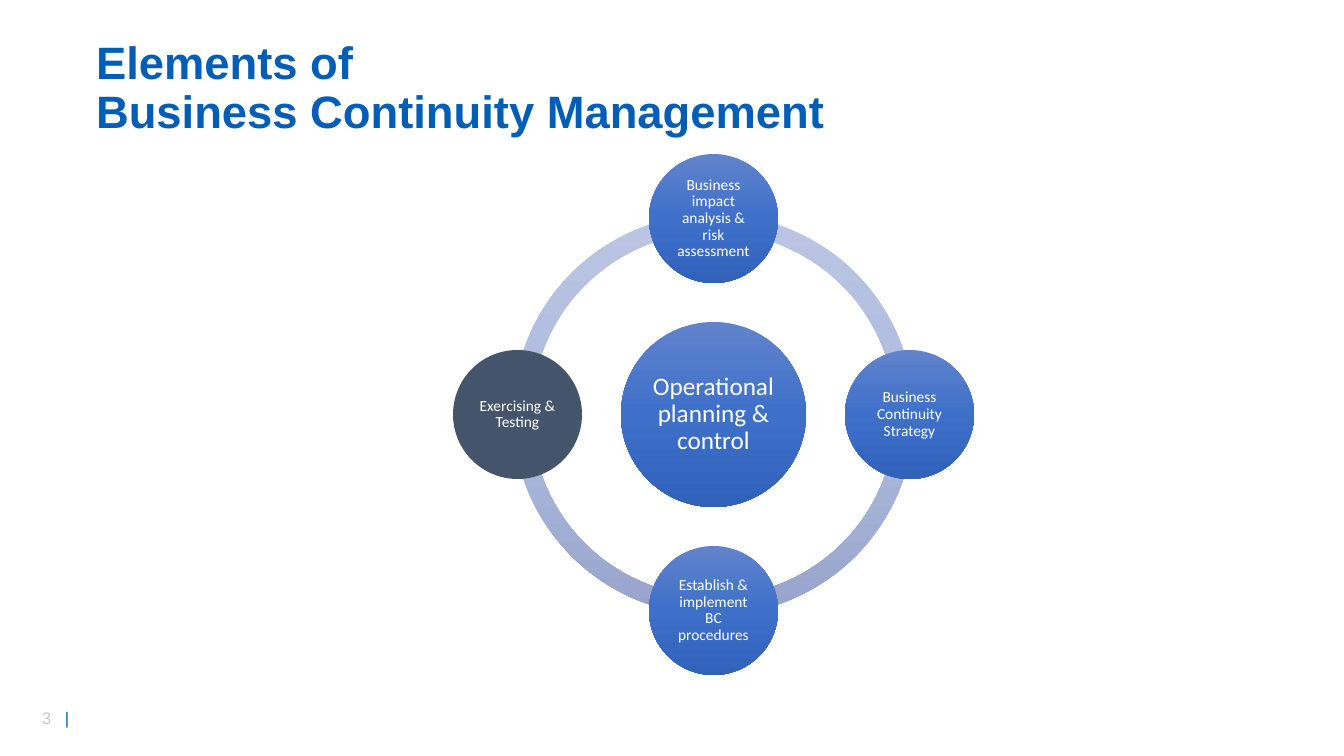
import copy
from dataclasses import dataclass

import lxml.etree
import pptx
import pptx.dml.color
import pptx.enum.shapes
import pptx.enum.text
import pptx.oxml.ns
import pptx.util

SHAPE = pptx.enum.shapes.MSO_SHAPE
ANCHOR = pptx.enum.text.MSO_ANCHOR
ALIGN = pptx.enum.text.PP_ALIGN
qn = pptx.oxml.ns.qn


@dataclass(frozen=True)
class Theme:
    blue: str = "005EB8"
    grey: str = "C9C9C9"
    white: str = "FFFFFF"
    slate: str = "44546A"
    ring: tuple = ("BBC5E3", "AEBBE0", "98A4CB")
    disc: tuple = ("6183CB", "3E70CA", "3062BB")
    heading_font: str = "Arial"
    diagram_font: str = "Calibri"
    title_size: float = 32.4
    hub_size: int = 18
    node_size: int = 11
    footer_size: int = 12


def px(length):
    return pptx.util.Emu(round(length * 914400 / 100.8))


def rgb(code):
    return pptx.dml.color.RGBColor.from_string(code)


class Painter:
    def __init__(self, page, theme):
        self.page = page
        self.theme = theme

    def style(self, span, font, size, color, bold=False):
        span.font.name = font
        span.font.size = pptx.util.Pt(size)
        span.font.bold = bold
        span.font.color.rgb = rgb(color)

    def paint(self, shape, colors):
        shape.shadow.inherit = False
        shape.line.fill.background()
        if isinstance(colors, str):
            shape.fill.solid()
            shape.fill.fore_color.rgb = rgb(colors)
            return
        shape.fill.gradient()
        shape.fill.gradient_angle = 270
        stop_list = shape._element.spPr.find(".//" + qn("a:gsLst"))
        stop_list.insert(1, copy.deepcopy(stop_list[0]))
        for stop, color, position in zip(shape.fill.gradient_stops, colors, (0, 0.5, 1)):
            stop.color.rgb = rgb(color)
            stop.position = position

    def title(self, text, left, top, width, height):
        box = self.page.shapes.title
        box.left, box.top, box.width, box.height = map(px, (left, top, width, height))
        frame = box.text_frame
        frame.text = text
        frame.word_wrap = True
        frame.auto_size = pptx.enum.text.MSO_AUTO_SIZE.NONE
        frame.vertical_anchor = ANCHOR.MIDDLE
        para = frame.paragraphs[0]
        para.alignment = ALIGN.LEFT
        para.line_spacing = 0.9
        for span in para.runs:
            self.style(span, self.theme.heading_font, self.theme.title_size, self.theme.blue, True)
        for line_break in para._p.findall(qn("a:br")):
            line_break.append(copy.deepcopy(para.runs[0]._r.rPr))

    def page_number(self, number, left, top, width, height, tab):
        box = self.page.shapes.add_textbox(*map(px, (left, top, width, height)))
        box.text_frame.word_wrap = True
        para = box.text_frame.paragraphs[0]
        para.text = number + "\t"
        para.add_run().text = "|"
        tabs = lxml.etree.SubElement(para._p.get_or_add_pPr(), qn("a:tabLst"))
        lxml.etree.SubElement(tabs, qn("a:tab"), pos=str(px(tab)), algn="l")
        for span, color in zip(para.runs, (self.theme.grey, self.theme.blue)):
            self.style(span, self.theme.heading_font, self.theme.footer_size, color)

    def centred(self, kind, x, y, size, colors):
        corner = (x - size // 2, y - size // 2)
        shape = self.page.shapes.add_shape(kind, *map(px, (*corner, size, size)))
        self.paint(shape, colors)
        return shape

    def arc(self, x, y, size, start, end):
        shape = self.centred(SHAPE.BLOCK_ARC, x, y, size, self.theme.ring)
        for index, value in enumerate((start, end, 0.046)):
            shape.adjustments[index] = value

    def disc(self, text, x, y, size, font_size, colors, inset):
        shape = self.centred(SHAPE.OVAL, x, y, size, colors)
        frame = shape.text_frame
        frame.text = text
        frame.word_wrap = True
        frame.vertical_anchor = ANCHOR.MIDDLE
        frame.margin_left = frame.margin_right = px(inset)
        frame.margin_top = frame.margin_bottom = px(inset)
        para = frame.paragraphs[0]
        para.alignment = ALIGN.CENTER
        para.line_spacing = 0.9
        self.style(para.runs[0], self.theme.diagram_font, font_size, self.theme.white)


def main():
    deck = pptx.Presentation()
    deck.slide_width, deck.slide_height = px(1344), px(756)
    theme = Theme()
    painter = Painter(deck.slides.add_slide(deck.slide_layouts[5]), theme)

    painter.page_number("3", 32, 703, 72, 30, tab=23)
    painter.title("Elements of\vBusiness Continuity Management", 86, 56, 1173, 67)

    center_x, center_y, orbit = 713, 414, 196
    quarter = 54
    for turn in (2, 1, 0, 3):
        painter.arc(center_x, center_y, 401, turn * quarter, (turn + 1) % 4 * quarter)

    painter.disc("Operational planning & control", center_x, center_y, 185,
                 theme.hub_size, theme.disc, 3)
    nodes = (
        ("Business impact analysis & risk assessment", 0, -1, theme.disc),
        ("Business Continuity Strategy", 1, 0, theme.disc),
        ("Establish & implement BC procedures", 0, 1, theme.disc),
        ("Exercising & Testing", -1, 0, theme.slate),
    )
    for text, across, down, colors in nodes:
        painter.disc(text, center_x + across * orbit, center_y + down * orbit, 129,
                     theme.node_size, colors, 2)

    deck.save("out.pptx")


if __name__ == "__main__":
    main()
